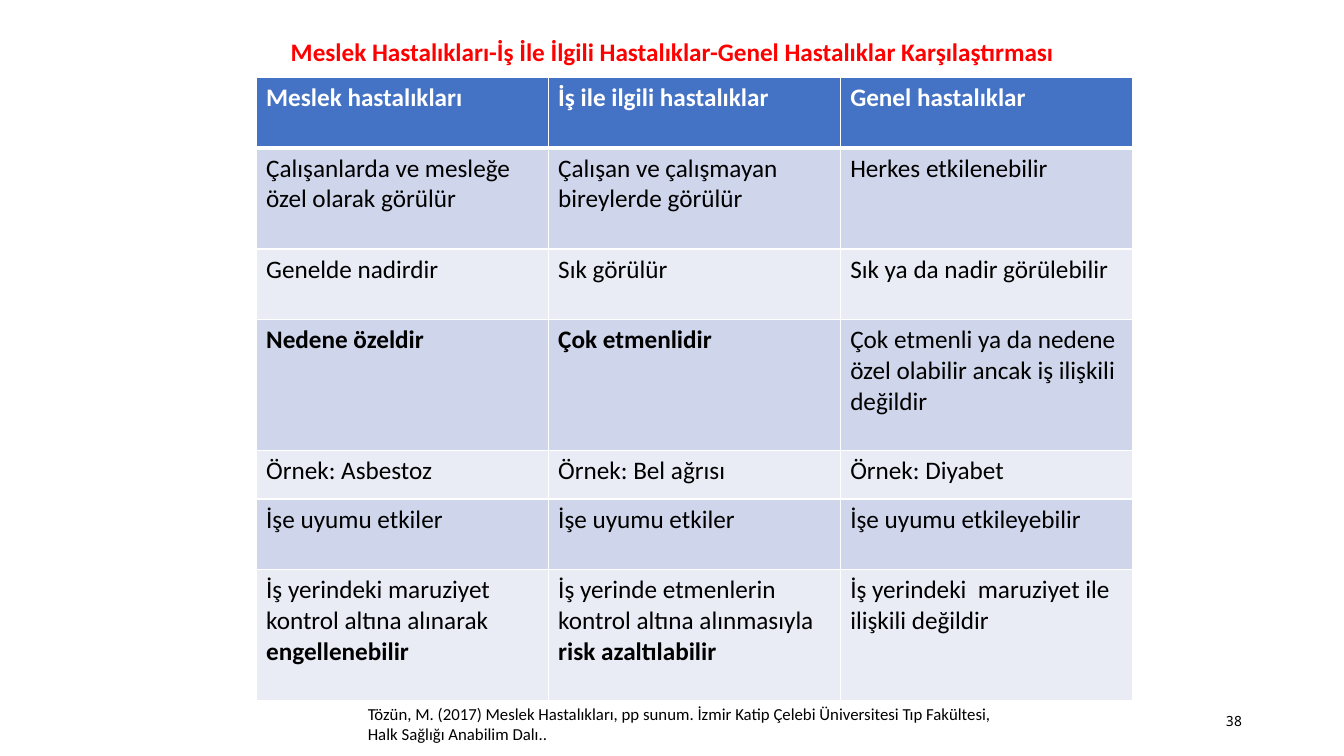
from dataclasses import dataclass

from lxml.etree import SubElement
from pptx import Presentation
from pptx.dml.color import RGBColor
from pptx.enum.text import MSO_ANCHOR, MSO_AUTO_SIZE, PP_ALIGN
from pptx.oxml.ns import qn
from pptx.slide import Slide
from pptx.table import _Cell
from pptx.text.text import TextFrame
from pptx.util import Pt

SCALE = 9144


@dataclass(frozen=True)
class Theme:
    """Colours, fonts and type sizes of the slide."""
    red: str = "FF0000"
    black: str = "000000"
    white: str = "FFFFFF"
    head: str = "4472C4"
    bands: tuple[str, str] = ("CFD5EA", "E9EBF5")
    font: str = "Calibri"
    mono: str = "Noto Sans Mono"
    main: int = 18
    note: int = 12
    page: int = 10
    thin: int = 1
    thick: int = 3


@dataclass(frozen=True)
class Label:
    """A text box with its place in px and its format."""
    text: str
    box: tuple[int, int, int, int]
    size: int
    font: str = Theme.font
    color: str = Theme.black
    align: PP_ALIGN = PP_ALIGN.LEFT
    anchor: MSO_ANCHOR = MSO_ANCHOR.MIDDLE
    space: float = 1.0
    grow: bool = False


@dataclass(frozen=True)
class Row:
    """A table row with its height in px; bold words stand between asterisks."""
    height: int
    cells: tuple[str, str, str]


THEME = Theme()

LABELS = (
    Label("*Meslek Hastalıkları-İş İle İlgili Hastalıklar-Genel Hastalıklar Karşılaştırması*",
          (217, -10, 900, 125), THEME.main, color=THEME.red,
          align=PP_ALIGN.CENTER, space=0.9),
    Label("38", (942, 695, 300, 40), THEME.page, font=THEME.mono, align=PP_ALIGN.RIGHT),
    Label("Tözün, M. (2017) Meslek Hastalıkları, pp sunum. İzmir Katip Çelebi "
          "Üniversitesi Tıp Fakültesi, Halk Sağlığı Anabilim Dalı..",
          (355, 693, 664, 50), THEME.note, anchor=MSO_ANCHOR.TOP, grow=True),
)

ROWS = (
    Row(70, ("*Meslek hastalıkları*", "*İş ile ilgili hastalıklar*", "*Genel hastalıklar*")),
    Row(100, ("Çalışanlarda ve mesleğe özel olarak görülür",
              "Çalışan ve çalışmayan bireylerde görülür",
              "Herkes etkilenebilir")),
    Row(70, ("Genelde nadirdir", "Sık görülür", "Sık ya da nadir görülebilir")),
    Row(130, ("*Nedene özeldir*", "*Çok etmenlidir*",
              "Çok etmenli ya da nedene özel olabilir ancak iş ilişkili değildir")),
    Row(48, ("Örnek: Asbestoz", "Örnek: Bel ağrısı", "Örnek: Diyabet")),
    Row(70, ("İşe uyumu etkiler", "İşe uyumu etkiler", "İşe uyumu etkileyebilir")),
    Row(130, ("İş yerindeki maruziyet kontrol altına alınarak *engellenebilir*",
              "İş yerinde etmenlerin kontrol altına alınmasıyla *risk azaltılabilir*",
              "İş yerindeki  maruziyet ile ilişkili değildir")),
)


def px(count: int) -> int:
    """Turn px into EMU."""
    return count * SCALE


def write(frame: TextFrame, text: str, *, size: int, font: str = THEME.font,
          color: str = THEME.black, align: PP_ALIGN = PP_ALIGN.LEFT,
          space: float = 1.0) -> None:
    """Fill a frame with one paragraph, bold between asterisks."""
    line = frame.paragraphs[0]
    line.alignment = align
    line.line_spacing = space
    for index, part in enumerate(text.split("*")):
        if part:
            run = line.add_run()
            run.text = part
            run.font.size = Pt(size)
            run.font.name = font
            run.font.bold = index % 2 == 1
            run.font.color.rgb = RGBColor.from_string(color)


def add_label(slide: Slide, label: Label) -> None:
    """Draw one text box."""
    frame = slide.shapes.add_textbox(*map(px, label.box)).text_frame
    frame.word_wrap = True
    frame.auto_size = MSO_AUTO_SIZE.SHAPE_TO_FIT_TEXT if label.grow else MSO_AUTO_SIZE.NONE
    frame.vertical_anchor = label.anchor
    write(frame, label.text, size=label.size, font=label.font, color=label.color,
          align=label.align, space=label.space)


def edge(cell: _Cell, sides: dict[str, int]) -> None:
    """Give a cell white borders of the stated widths."""
    props = cell._tc.get_or_add_tcPr()
    for side, width in sides.items():
        line = SubElement(props, qn(f"a:ln{side}"), w=str(Pt(width)))
        fill = SubElement(line, qn("a:solidFill"))
        SubElement(fill, qn("a:srgbClr"), val=THEME.white)


def add_grid(slide: Slide, left: int, top: int, width: int) -> None:
    """Draw the table of diseases."""
    count = len(ROWS[0].cells)
    height = sum(row.height for row in ROWS)
    table = slide.shapes.add_table(len(ROWS), count, px(left), px(top),
                                   px(width), px(height)).table
    for index, row in enumerate(ROWS):
        table.rows[index].height = px(row.height)
        head = index == 0
        shade = THEME.head if head else THEME.bands[(index - 1) % 2]
        sides = {"L": THEME.thin, "R": THEME.thin,
                 "T": THEME.thick if index == 1 else THEME.thin,
                 "B": THEME.thick if head else THEME.thin}
        for place, text in enumerate(row.cells):
            cell = table.cell(index, place)
            edge(cell, sides)
            cell.fill.solid()
            cell.fill.fore_color.rgb = RGBColor.from_string(shade)
            write(cell.text_frame, text, size=THEME.main,
                  color=THEME.white if head else THEME.black)


def main() -> None:
    """Build and save the slide."""
    deck = Presentation()
    deck.slide_width, deck.slide_height = px(1333), px(750)
    slide = deck.slides.add_slide(deck.slide_layouts[6])
    title, *notes = LABELS
    add_label(slide, title)
    add_grid(slide, 254, 77, 869)
    for note in notes:
        add_label(slide, note)
    deck.save("out.pptx")


if __name__ == "__main__":
    main()
